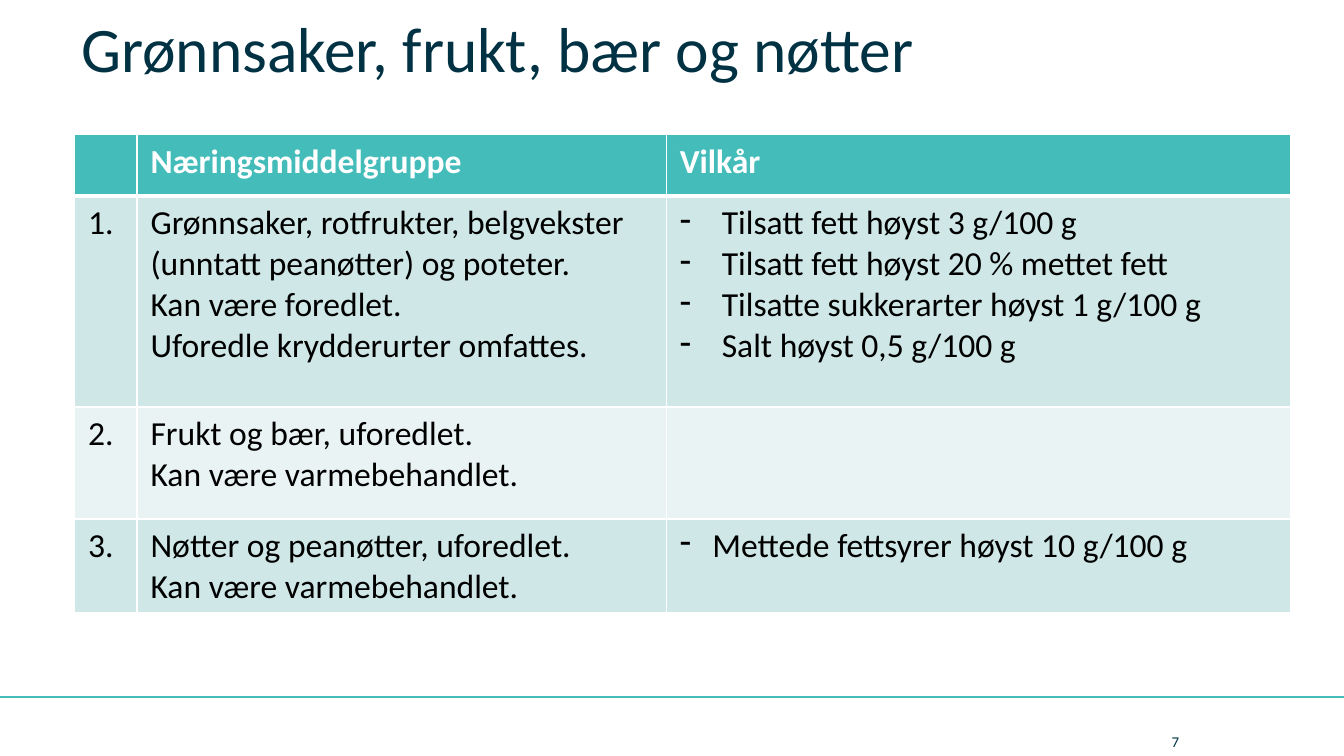
from lxml import etree
from pptx import Presentation
from pptx.dml.color import RGBColor
from pptx.enum import shapes, text
from pptx.oxml import ns
from pptx.util import Pt

TEAL, NAVY, WHITE, BLACK = "43BCBA", "003244", "FFFFFF", "000000"
BANDS = ["CFE7E7", "E9F3F3"]


def color(code):
    return RGBColor.from_string(code)


def add(parent, tag, **attrs):
    return etree.SubElement(parent, ns.qn(tag), attrs)


class Deck:
    font = "Calibri"

    def __init__(self, wide, high):
        self.prs = Presentation()
        self.prs.slide_width, self.prs.slide_height = Pt(wide), Pt(high)
        self.slide = self.prs.slides.add_slide(self.prs.slide_layouts[6])

    def fill_text(self, frame, lines, size, ink, bold=False, dash=0):
        for i, line in enumerate(lines):
            para = frame.paragraphs[0] if i == 0 else frame.add_paragraph()
            if dash:
                props = para._p.get_or_add_pPr()
                props.set("marL", str(Pt(dash)))
                props.set("indent", str(-Pt(dash)))
                add(props, "a:buFontTx")
                add(props, "a:buChar", char="-")
            run = para.add_run()
            run.text = line
            run.font.name, run.font.size = self.font, Pt(size)
            run.font.bold = bold
            run.font.color.rgb = color(ink)

    def label(self, words, x, y, w, h, size, anchor):
        frame = self.slide.shapes.add_textbox(Pt(x), Pt(y), Pt(w), Pt(h)).text_frame
        frame.word_wrap = True
        frame.vertical_anchor = anchor
        self.fill_text(frame, [words], size, NAVY)

    def line(self, x1, y1, x2, y2, ink, width):
        rule = self.slide.shapes.add_connector(
            shapes.MSO_CONNECTOR.STRAIGHT, Pt(x1), Pt(y1), Pt(x2), Pt(y2))
        rule.line.color.rgb = color(ink)
        rule.line.width = Pt(width)
        add(rule._element.spPr, "a:effectLst")

    def edges(self, cell, **widths):
        props = cell._tc.get_or_add_tcPr()
        for side in "LRTB":
            edge = add(props, "a:ln" + side, w=str(Pt(widths.get(side, 1))))
            add(add(edge, "a:solidFill"), "a:srgbClr", val=WHITE)

    def table(self, x, y, cols, highs, rows):
        grid = self.slide.shapes.add_table(
            len(rows), len(cols), Pt(x), Pt(y), Pt(sum(cols)), Pt(sum(highs))).table
        for col, wide in zip(grid.columns, cols):
            col.width = Pt(wide)
        for r, (high, row) in enumerate(zip(highs, rows)):
            grid.rows[r].height = Pt(high)
            head = r == 0
            for c, (lines, dash) in enumerate(row):
                cell = grid.cell(r, c)
                cell.margin_left = cell.margin_right = Pt(7.2)
                cell.margin_top = cell.margin_bottom = Pt(3.6)
                # The rule under the header is heavier
                self.edges(cell, B=3 if head else 1, T=3 if r == 1 else 1)
                cell.fill.solid()
                cell.fill.fore_color.rgb = color(TEAL if head else BANDS[(r - 1) % 2])
                self.fill_text(cell.text_frame, lines, 18,
                               WHITE if head else BLACK, head, dash)


def main():
    deck = Deck(720, 405)

    # Footer rule and title
    deck.line(0, 373.5, 720, 373.5, TEAL, 1)
    deck.label("Grønnsaker, frukt, bær og nøtter", 36.5, 0, 646.5, 49, 34,
               text.MSO_ANCHOR.BOTTOM)

    # Food groups: each cell holds its lines and the dash indent
    rows = [
        [([], 0), (["Næringsmiddelgruppe"], 0), (["Vilkår"], 0)],
        [(["1."], 0),
         (["Grønnsaker, rotfrukter, belgvekster",
           "(unntatt peanøtter) og poteter.",
           "Kan være foredlet.",
           "Uforedle krydderurter omfattes."], 0),
         (["Tilsatt fett høyst 3 g/100 g",
           "Tilsatt fett høyst 20 % mettet fett",
           "Tilsatte sukkerarter høyst 1 g/100 g",
           "Salt høyst 0,5 g/100 g"], 22.5)],
        [(["2."], 0),
         (["Frukt og bær, uforedlet.", "Kan være varmebehandlet."], 0),
         ([], 0)],
        [(["3."], 0),
         (["Nøtter og peanøtter, uforedlet.", "Kan være varmebehandlet."], 0),
         (["Mettede fettsyrer høyst 10 g/100 g"], 17.5)],
    ]
    deck.table(40, 72, [33.5, 283.5, 334.5], [33, 113, 60, 49], rows)

    # Page number
    deck.label("7", 620.5, 393, 51, 9, 8, text.MSO_ANCHOR.MIDDLE)

    deck.prs.save("out.pptx")


if __name__ == "__main__":
    main()
